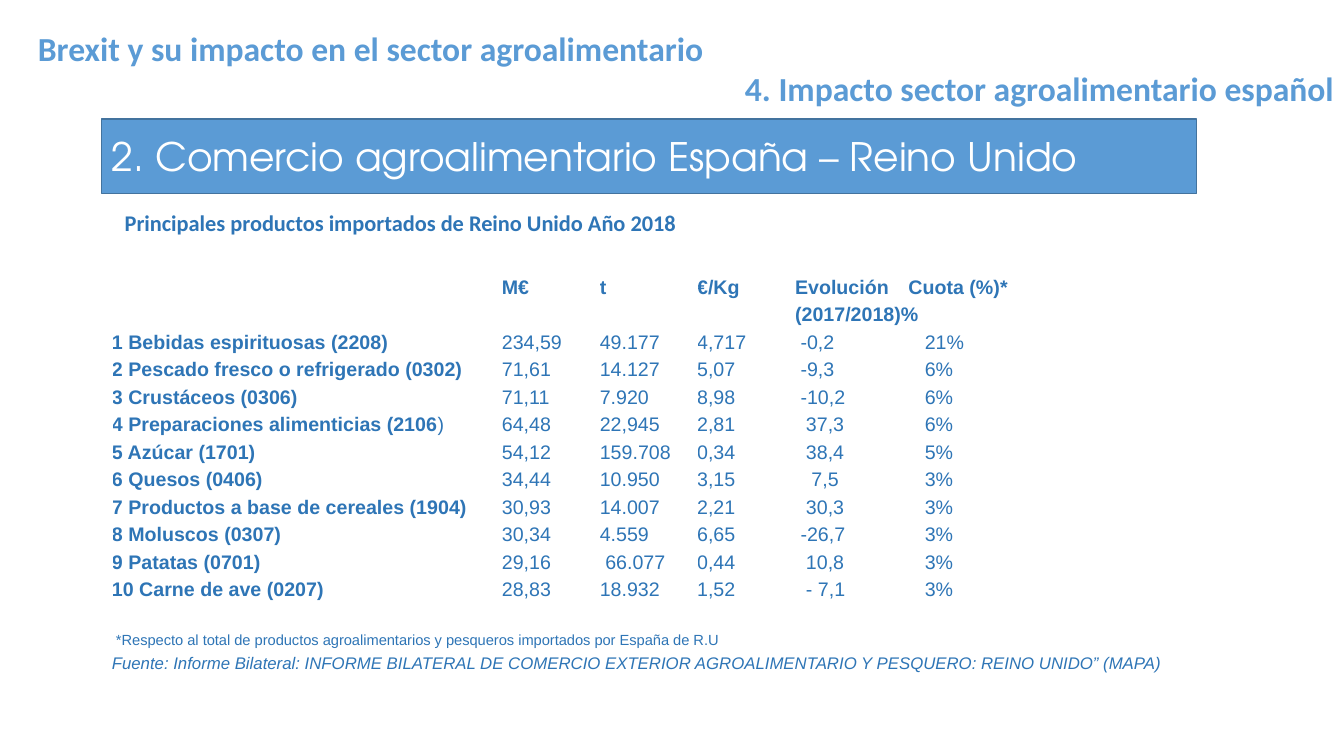
from lxml.etree import SubElement
from pptx import Presentation
from pptx.dml.color import RGBColor
from pptx.enum.text import MSO_ANCHOR as Anchor, MSO_AUTO_SIZE as Auto, PP_ALIGN as Align
from pptx.oxml import parse_xml
from pptx.oxml.ns import nsdecls, qn
from pptx.util import Pt

HUES = {"sky": "5B9BD5", "edge": "43739E", "ink": "2E75B6", "white": "FFFFFF"}
SPACE = 3.9
WIDTHS = [278.5, 70, 69.5, 70, 81, 90]
HEADS = [["", "M€", "t", "€/Kg", "Evolución", "Cuota (%)*"],
         ["", "", "", "", "(2017/2018)%", ""]]
GOODS = [
    ("1 Bebidas espirituosas (2208)", "234,59", "49.177", "4,717", "-0,2", "21%"),
    ("2 Pescado fresco o refrigerado (0302)", "71,61", "14.127", "5,07", "-9,3", "6%"),
    ("3 Crustáceos (0306)", "71,11", "7.920", "8,98", "-10,2", "6%"),
    ("4 Preparaciones alimenticias (2106|)", "64,48", "22,945", "2,81", "37,3", "6%"),
    ("5 Azúcar (1701)", "54,12", "159.708", "0,34", "38,4", "5%"),
    ("6 Quesos (0406)", "34,44", "10.950", "3,15", "7,5", "3%"),
    ("7 Productos a base de cereales (1904)", "30,93", "14.007", "2,21", "30,3", "3%"),
    ("8 Moluscos (0307)", "30,34", "4.559", "6,65", "-26,7", "3%"),
    ("9 Patatas (0701)", "29,16", "66.077", "0,44", "10,8", "3%"),
    ("10 Carne de ave (0207)", "28,83", "18.932", "1,52", "- 7,1", "3%"),
]
SHIFTS = [1, 1, 1, 2, 2, 3, 2, 1, 2, 2]


def hue(name):
    return RGBColor.from_string(HUES[name])


def write(para, text, size, face, tint, bold=False, slant=False):
    run = para.add_run()
    run.text = text
    font = run.font
    font.size, font.name = Pt(size), face
    font.bold, font.italic = bold, slant
    font.color.rgb = hue(tint)


def label(slide, box, text, size, face, tint, bold=False, slant=False,
          align=Align.LEFT, back=None):
    shape = slide.shapes.add_textbox(*map(Pt, box))
    if back:
        shape.fill.solid()
        shape.fill.fore_color.rgb = hue(back)
    frame = shape.text_frame
    frame.word_wrap = True
    para = frame.paragraphs[0]
    para.alignment = align
    write(para, text, size, face, tint, bold, slant)


def banner(slide, box, text):
    title = slide.shapes.title
    title.left, title.top, title.width, title.height = map(Pt, box)
    title.element.spPr.insert(1, parse_xml(
        f'<a:prstGeom {nsdecls("a")} prst="roundRect"><a:avLst/></a:prstGeom>'))
    title.fill.solid()
    title.fill.fore_color.rgb = hue("sky")
    title.line.color.rgb = hue("edge")
    title.line.width = Pt(1)
    frame = title.text_frame
    frame.auto_size = Auto.NONE
    frame.word_wrap = True
    frame.vertical_anchor = Anchor.MIDDLE
    para = frame.paragraphs[0]
    para.alignment = Align.LEFT
    write(para, text, 28, "TeX Gyre Adventor", "white")


def fill(cell, text, bold, shift):
    cell.fill.background()
    cell.margin_left = Pt(shift * SPACE)
    cell.margin_right = cell.margin_top = cell.margin_bottom = 0
    cell.vertical_anchor = Anchor.MIDDLE
    para = cell.text_frame.paragraphs[0]
    for i, part in enumerate(text.split("|")):
        if part:
            write(para, part, 14, "Arial", "ink", bold and i == 0)
    SubElement(para._p, qn("a:endParaRPr"), sz="1400")


def indent(row, col):
    if row < len(HEADS):
        return 0
    good = row - len(HEADS)
    if col == 4:
        return SHIFTS[good]
    if col == 5:
        return 3
    return int(col == 2 and GOODS[good][col] == "66.077")


def trade(slide, box):
    rows = HEADS + GOODS
    table = slide.shapes.add_table(len(rows), len(WIDTHS), *map(Pt, box)).table
    table.first_row = table.horz_banding = False
    for col, width in zip(table.columns, WIDTHS):
        col.width = Pt(width)
    for r, row in enumerate(rows):
        table.rows[r].height = Pt(box[3] / len(rows))
        for c, text in enumerate(row):
            fill(table.cell(r, c), text, c == 0 or r < len(HEADS), indent(r, c))
    table.cell(1, 4).merge(table.cell(1, 5))


def heads(slide):
    label(slide, (20, 16.5, 513, 36), "Brexit y su impacto en el sector agroalimentario",
          24, "Calibri", "sky", bold=True, back="white")
    label(slide, (509, 45, 451, 36), "4. Impacto sector agroalimentario español",
          24, "Calibri", "sky", bold=True, align=Align.RIGHT, back="white")


def notes(slide, left, top):
    label(slide, (left + 3, top, 700, 19.5),
          "*Respecto al total de productos agroalimentarios y pesqueros importados por España de R.U",
          10.5, "Arial", "ink")
    label(slide, (left, top + 15.7, 860, 21),
          "Fuente: Informe Bilateral: INFORME BILATERAL DE COMERCIO EXTERIOR "
          "AGROALIMENTARIO Y PESQUERO: REINO UNIDO” (MAPA)",
          12, "Arial", "ink", slant=True)


def main():
    deck = Presentation()
    deck.slide_width, deck.slide_height = Pt(960), Pt(540)
    slide = deck.slides.add_slide(deck.slide_layouts[5])
    heads(slide)
    banner(slide, (72.7, 85, 782, 53.3), "2. Comercio agroalimentario España – Reino Unido")
    label(slide, (82, 145.5, 772.5, 27), "Principales productos importados de Reino Unido Año 2018",
          16, "Calibri", "ink", bold=True)
    trade(slide, (80, 195.3, sum(WIDTHS), 236.16))
    notes(slide, 72.8, 447.3)
    deck.save("out.pptx")


if __name__ == "__main__":
    main()
